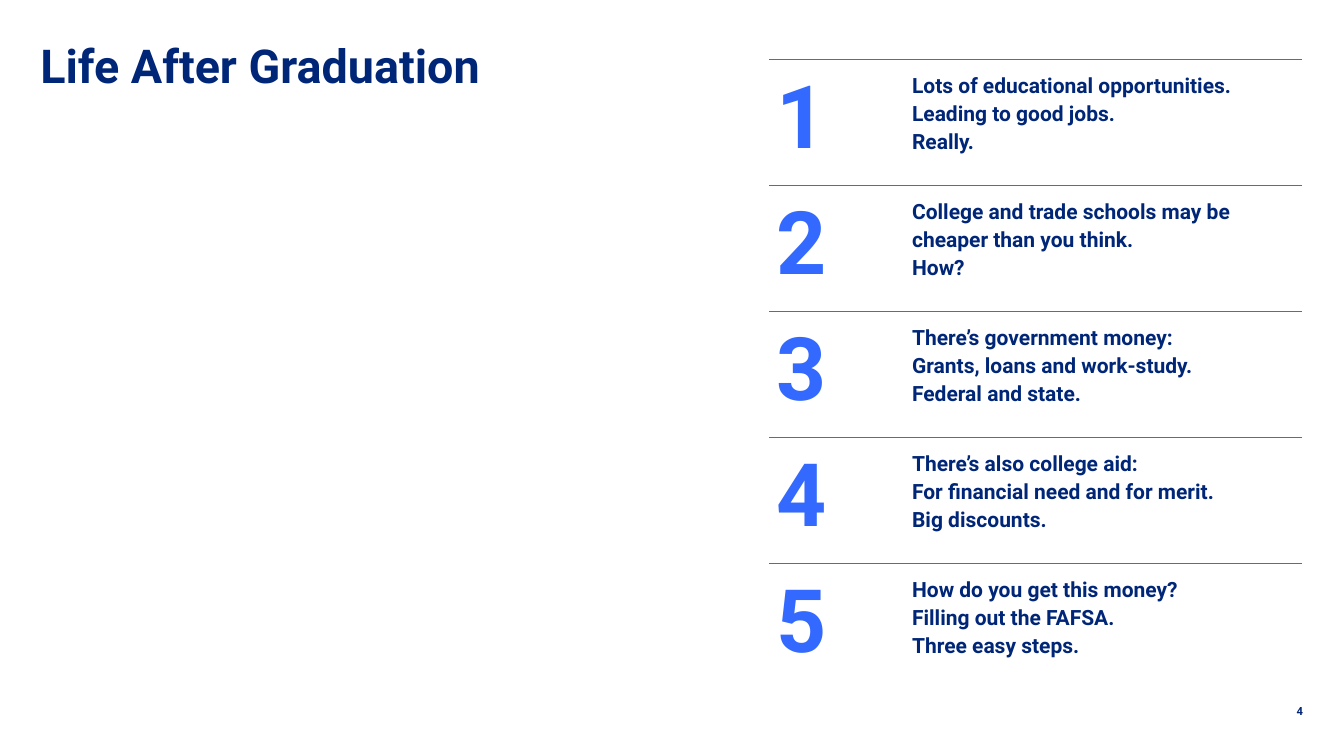
from dataclasses import dataclass

from lxml.etree import SubElement
from pptx import Presentation
from pptx.dml.color import RGBColor
from pptx.enum.shapes import MSO_CONNECTOR
from pptx.enum.text import MSO_ANCHOR, MSO_AUTO_SIZE, PP_ALIGN
from pptx.oxml.ns import qn
from pptx.slide import Slide
from pptx.text.text import TextFrame
from pptx.util import Cm, Pt

FONT = "Roboto"
NAVY = "002677"
BLUE = "3369FF"
RULE_BLUE = "336AFF"

# Lengths in centimetres
ROW_PITCH = 3.81
RULE_TOP, RULE_LEFT, RULE_RIGHT = 1.8, 23.24, 39.37
NUMBER_TOP = 2.2
MESSAGE_TOP = 2.39
SIDE_INSET = 0.2


@dataclass(frozen=True)
class Box:
    left: float
    top: float
    width: float
    height: float


@dataclass(frozen=True)
class TextStyle:
    size: float
    color: str = NAVY
    top_inset: float = 0.13
    alignment: PP_ALIGN = PP_ALIGN.LEFT
    line_spacing: float | Pt = 1.0
    space_between: float = 0


TITLE_STYLE = TextStyle(40, top_inset=0.2, line_spacing=0.9)
NUMBER_STYLE = TextStyle(75, BLUE, top_inset=0, line_spacing=0.9)
MESSAGE_STYLE = TextStyle(18, line_spacing=Pt(12), space_between=12)
PAGE_STYLE = TextStyle(9.6, alignment=PP_ALIGN.RIGHT)

MESSAGES = [
    "Lots of educational opportunities.\nLeading to good jobs.\nReally.",
    "College and trade schools may be\ncheaper than you think.\nHow?",
    "There’s government money:\nGrants, loans and work-study.\nFederal and state.",
    "There’s also college aid:\nFor financial need and for merit.\nBig discounts.",
    "How do you get this money?\nFilling out the FAFSA.\nThree easy steps.",
]


def rgb(color: str) -> RGBColor:
    return RGBColor.from_string(color)


def write_text(text_frame: TextFrame, text: str, style: TextStyle) -> None:
    text_frame.text = text
    text_frame.word_wrap = True
    text_frame.auto_size = MSO_AUTO_SIZE.NONE
    text_frame.vertical_anchor = MSO_ANCHOR.TOP
    text_frame.margin_left = text_frame.margin_right = Cm(SIDE_INSET)
    text_frame.margin_top = Cm(style.top_inset)
    text_frame.margin_bottom = 0
    for index, paragraph in enumerate(text_frame.paragraphs):
        paragraph.alignment = style.alignment
        paragraph.line_spacing = style.line_spacing
        paragraph.space_before = Pt(style.space_between if index else 0)
        for run in paragraph.runs:
            run.font.name = FONT
            run.font.size = Pt(style.size)
            run.font.bold = True
            run.font.color.rgb = rgb(style.color)


def add_text(slide: Slide, box: Box, text: str, style: TextStyle) -> None:
    shape = slide.shapes.add_textbox(
        Cm(box.left), Cm(box.top), Cm(box.width), Cm(box.height))
    write_text(shape.text_frame, text, style)


def add_title(slide: Slide, box: Box, text: str) -> None:
    title = slide.shapes.title
    title.left, title.top = Cm(box.left), Cm(box.top)
    title.width, title.height = Cm(box.width), Cm(box.height)
    write_text(title.text_frame, text, TITLE_STYLE)


def add_rule(slide: Slide, top: float) -> None:
    rule = slide.shapes.add_connector(
        MSO_CONNECTOR.STRAIGHT, Cm(RULE_RIGHT), Cm(top), Cm(RULE_LEFT), Cm(top))
    rule.line.color.rgb = rgb(RULE_BLUE)
    rule.line.width = Pt(1)
    SubElement(rule._element.spPr, qn("a:effectLst"))


def main() -> None:
    presentation = Presentation()
    presentation.slide_width, presentation.slide_height = Cm(40.64), Cm(22.86)
    slide = presentation.slides.add_slide(presentation.slide_layouts[5])
    slide.background.fill.solid()
    slide.background.fill.fore_color.rgb = rgb("FFFFFF")

    # Title
    add_title(slide, Box(1.02, 1.12, 15.49, 1.6), "Life After Graduation")

    # Numbered messages, each under a rule
    for index, message in enumerate(MESSAGES):
        offset = index * ROW_PITCH
        add_rule(slide, RULE_TOP + offset)
        add_text(slide, Box(23.27, NUMBER_TOP + offset, 3.68, 2.57),
                 str(index + 1), NUMBER_STYLE)
        add_text(slide, Box(27.38, MESSAGE_TOP + offset, 10.82, 2.4),
                 message, MESSAGE_STYLE)

    # Page number
    add_text(slide, Box(38.58, 21.16, 1.02, 0.48), "4", PAGE_STYLE)

    presentation.save("out.pptx")


if __name__ == "__main__":
    main()
